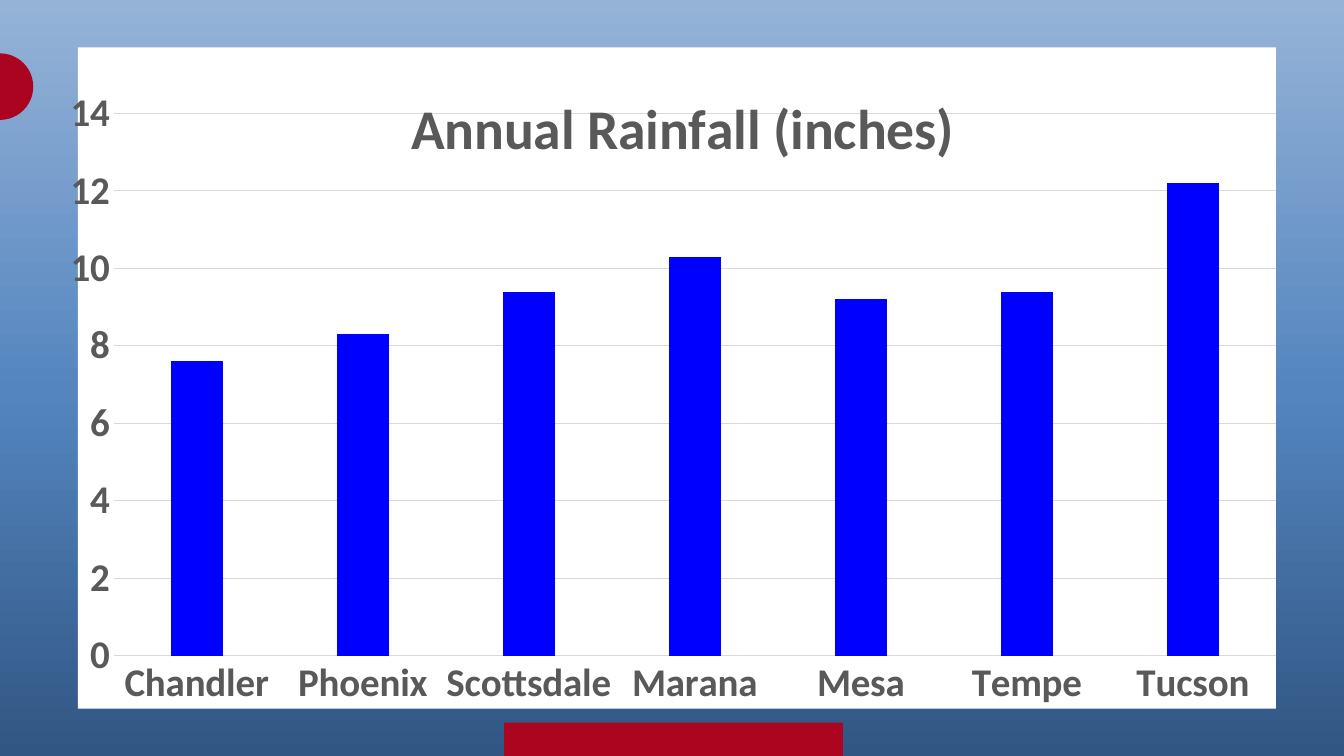
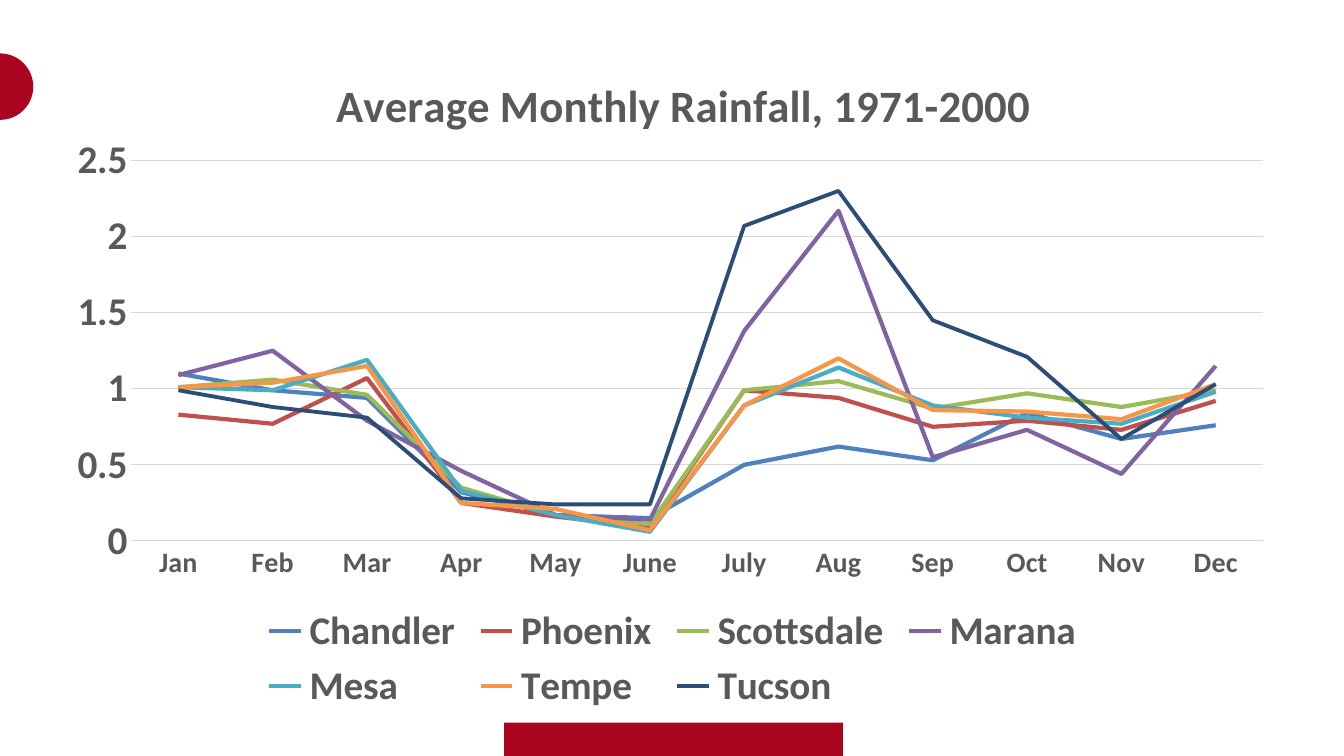
from copy import deepcopy

from pptx import Presentation
from pptx.chart.data import CategoryChartData
from pptx.dml.color import RGBColor
from pptx.enum.chart import XL_CHART_TYPE, XL_LEGEND_POSITION, XL_TICK_MARK
from pptx.enum.shapes import MSO_SHAPE
from pptx.oxml import parse_xml
from pptx.oxml.ns import nsdecls
from pptx.util import Inches, Pt

FONT = "Calibri"
COLORS = {
    "bar": "AB0520", "disc": "AB0420", "text": "595959", "grid": "D9D9D9",
    "white": "FFFFFF", "column": "0000FF",
}
SKY = [(0, "315683"), (0.48, "5485BF"), (1, "95B3D7")]

ANNUAL = {
    "Chandler": 7.6, "Phoenix": 8.3, "Scottsdale": 9.4, "Marana": 10.3,
    "Mesa": 9.2, "Tempe": 9.4, "Tucson": 12.2,
}
MONTHS = ["Jan", "Feb", "Mar", "Apr", "May", "June",
          "July", "Aug", "Sep", "Oct", "Nov", "Dec"]
# city, line colour, line width, monthly inches
MONTHLY = [
    ("Chandler", "4F81BD", 3,
     [1.1, 0.99, 0.94, 0.32, 0.17, 0.15, 0.5, 0.62, 0.53, 0.84, 0.67, 0.76]),
    ("Phoenix", "C0504D", 3,
     [0.83, 0.77, 1.07, 0.25, 0.16, 0.09, 0.99, 0.94, 0.75, 0.79, 0.73, 0.92]),
    ("Scottsdale", "9BBB59", 3,
     [1.01, 1.06, 0.96, 0.35, 0.17, 0.11, 0.99, 1.05, 0.87, 0.97, 0.88, 0.99]),
    ("Marana", "8064A2", 3,
     [1.09, 1.25, 0.79, 0.46, 0.17, 0.14, 1.38, 2.17, 0.55, 0.73, 0.44, 1.15]),
    ("Mesa", "4BACC6", 3,
     [1.01, 0.99, 1.19, 0.33, 0.17, 0.06, 0.89, 1.14, 0.89, 0.81, 0.77, 0.98]),
    ("Tempe", "F79646", 3,
     [1.01, 1.04, 1.15, 0.25, 0.21, 0.07, 0.89, 1.2, 0.86, 0.85, 0.8, 1.03]),
    ("Tucson", "2C4D75", 2.75,
     [0.99, 0.88, 0.81, 0.28, 0.24, 0.24, 2.07, 2.3, 1.45, 1.21, 0.67, 1.03]),
]


def rgb(name):
    return RGBColor.from_string(COLORS.get(name, name))


def style(font, size, color="text", bold=True):
    font.name, font.size, font.bold = FONT, Pt(size), bold
    font.color.rgb = rgb(color)


def write(frame, text, **fmt):
    frame.text = text
    style(frame.paragraphs[0].runs[0].font, **fmt)


def decorate(slide):
    """Add the red bar and the half disc that every slide carries."""
    for kind, box, color in [
        (MSO_SHAPE.RECTANGLE, (5, 7.17, 3.36, 0.33), "bar"),
        (MSO_SHAPE.OVAL, (-0.33, 0.53, 0.66, 0.66), "disc"),
    ]:
        shape = slide.shapes.add_shape(kind, *map(Inches, box))
        shape.shadow.inherit = False
        shape.fill.solid()
        shape.fill.fore_color.rgb = rgb(color)
        shape.line.fill.background()


def paint_sky(slide):
    fill = slide.background.fill
    fill.gradient()
    fill.gradient_angle = 90
    first = slide.element.xpath(".//a:gs")[0]
    first.addnext(deepcopy(first))
    for stop, (pos, color) in zip(fill.gradient_stops, SKY):
        stop.position = pos
        stop.color.rgb = rgb(color)


def place(part, index, **spots):
    """Fix a chart part at fractions of the chart's size."""
    for old in part.xpath("./c:layout"):
        part.remove(old)
    inner = '<c:layoutTarget val="inner"/>' if "w" in spots else ""
    modes = "".join(f'<c:{k}Mode val="edge"/>' for k in "xy")
    sizes = "".join(f'<c:{k} val="{v}"/>' for k, v in spots.items())
    part.insert(index, parse_xml(
        f'<c:layout {nsdecls("c")}><c:manualLayout>{inner}{modes}{sizes}'
        "</c:manualLayout></c:layout>"))


def add_chart(slide, kind, box, cats, rows, title, size, spot, plot,
              top, step, label):
    data = CategoryChartData()
    data.categories = cats
    for name, values in rows:
        data.add_series(name, values)
    chart = slide.shapes.add_chart(kind, *map(Inches, box), data).chart
    style(chart.font, 10, "000000", False)
    chart.has_legend = False
    chart.has_title = True
    write(chart.chart_title.text_frame, title, size=size)
    root = chart.element
    place(root.xpath("./c:chart/c:title")[0], 1, **dict(zip("xy", spot)))
    place(root.xpath("./c:chart/c:plotArea")[0], 0, **dict(zip("xywh", plot)))
    root.xpath("./c:chart")[0].addnext(parse_xml(
        f'<c:spPr {nsdecls("c", "a")}><a:solidFill>'
        f'<a:srgbClr val="{COLORS["white"]}"/></a:solidFill>'
        "<a:ln><a:noFill/></a:ln></c:spPr>"))

    cat, val = chart.category_axis, chart.value_axis
    for axis, points in ((cat, label), (val, 28)):
        axis.major_tick_mark = axis.minor_tick_mark = XL_TICK_MARK.NONE
        style(axis.tick_labels.font, points)
    val.minimum_scale, val.maximum_scale, val.major_unit = 0, top, step
    val.has_major_gridlines = True
    val.format.line.fill.background()
    for line in (cat.format.line, val.major_gridlines.format.line):
        line.color.rgb = rgb("grid")
        line.width = Pt(0.75)
    return chart


def add_annual(slide):
    paint_sky(slide)
    decorate(slide)
    chart = add_chart(
        slide, XL_CHART_TYPE.COLUMN_CLUSTERED, (0.7, 0.47, 11.96, 6.56),
        list(ANNUAL), [("Series 1", list(ANNUAL.values()))],
        "Annual Rainfall (inches)", 40, (0.27, 0.05),
        (0.03, 0.1, 0.97, 0.82), 14, 2, 28)
    plot = chart.plots[0]
    plot.vary_by_categories = False
    plot.gap_width, plot.overlap = 219, -27
    fill = plot.series[0].format.fill
    fill.solid()
    fill.fore_color.rgb = rgb("column")


def add_monthly(slide):
    fill = slide.background.fill
    fill.solid()
    fill.fore_color.rgb = rgb("white")
    decorate(slide)
    chart = add_chart(
        slide, XL_CHART_TYPE.LINE, (0.57, 0.38, 12.2, 6.74),
        MONTHS, [(city, values) for city, _, _, values in MONTHLY],
        "Average Monthly Rainfall, 1971-2000", 32, (0.22, 0.04),
        (0.06, 0.18, 0.92, 0.56), 2.5, 0.5, 20)
    chart.plots[0].vary_by_categories = False
    for series, (_, color, width, _) in zip(chart.plots[0].series, MONTHLY):
        series.smooth = False
        series.format.line.color.rgb = rgb(color)
        series.format.line.width = Pt(width)
    chart.has_legend = True
    chart.legend.position = XL_LEGEND_POSITION.BOTTOM
    chart.legend.include_in_layout = False
    style(chart.legend.font, 28)


def main():
    deck = Presentation()
    deck.slide_width, deck.slide_height = Inches(13.33), Inches(7.5)
    for build in (add_annual, add_monthly):
        build(deck.slides.add_slide(deck.slide_layouts[6]))
    deck.save("out.pptx")


if __name__ == "__main__":
    main()
